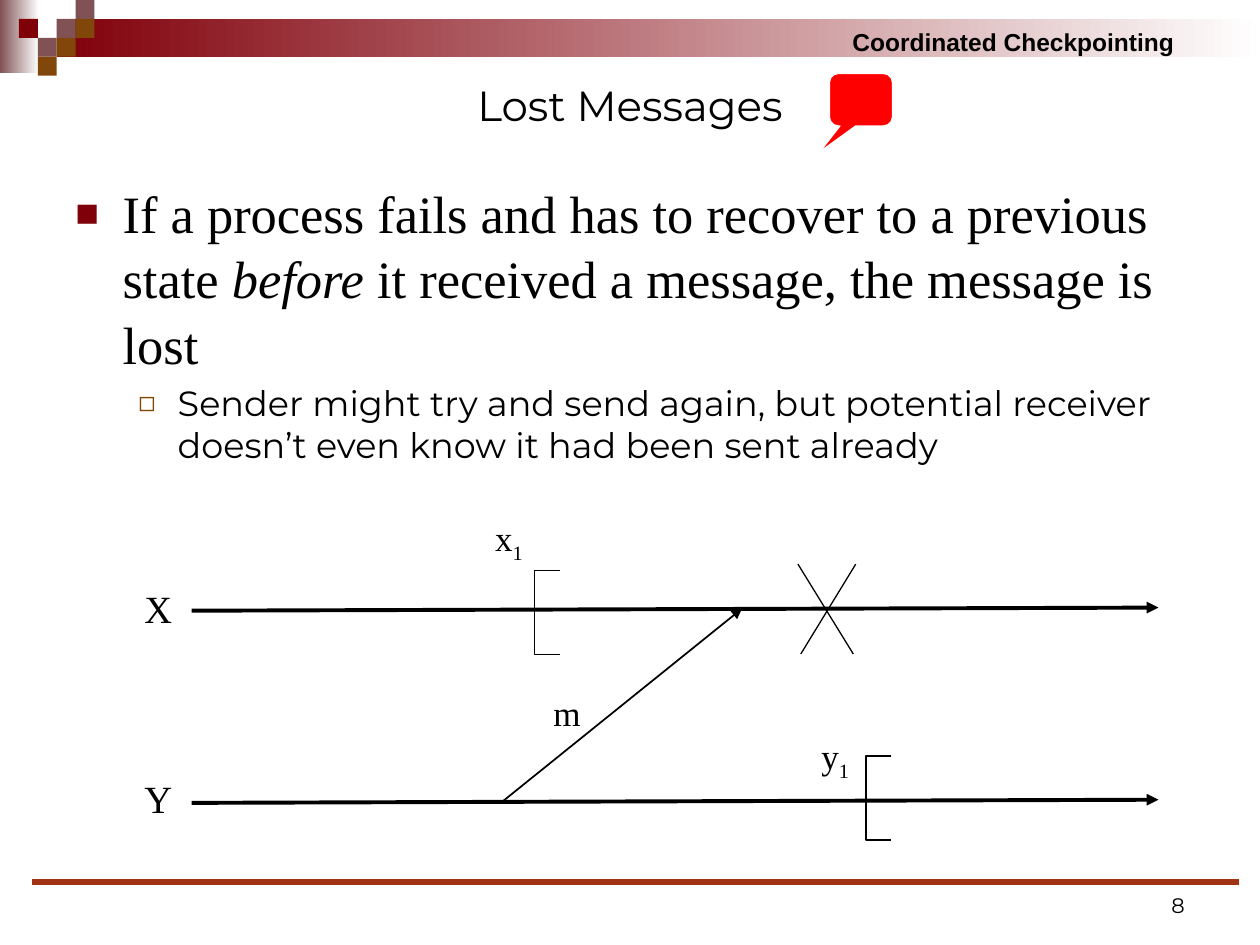
from dataclasses import dataclass

from lxml.etree import SubElement
from pptx import Presentation
from pptx.dml.color import RGBColor
from pptx.enum.shapes import MSO_CONNECTOR, MSO_SHAPE
from pptx.enum.text import MSO_ANCHOR as ANCHOR, PP_ALIGN as ALIGN
from pptx.oxml.ns import qn
from pptx.util import Pt


@dataclass(frozen=True)
class Theme:
    maroon: str = "80000A"
    mauve: str = "805255"
    brown: str = "81460A"
    rule: str = "A13214"
    red: str = "FF0000"
    white: str = "FFFFFF"
    black: str = "000000"
    sans: str = "Montserrat"
    serif: str = "Times New Roman"
    header: str = "Arial"
    body_size: int = 30
    title_size: int = 24
    axis_size: int = 22
    text_size: int = 20
    header_size: int = 14
    number_size: int = 12


T = Theme()
CELL = 10.8


def rgb(value):
    return RGBColor.from_string(value)


def add_block(slide, box, fill, fade_to=None, shape=MSO_SHAPE.RECTANGLE):
    """Preset shape without outline, solid or fading to the right."""
    sp = slide.shapes.add_shape(shape, *map(Pt, box))
    sp.shadow.inherit = False
    sp.line.fill.background()
    if fade_to:
        sp.fill.gradient()
        sp.fill.gradient_angle = 0
        for stop, color in zip(sp.fill.gradient_stops, (fill, fade_to)):
            stop.color.rgb = rgb(color)
    else:
        sp.fill.solid()
        sp.fill.fore_color.rgb = rgb(fill)
    return sp


def add_line(slide, start, end, width, color=T.black, arrow=False):
    line = slide.shapes.add_connector(MSO_CONNECTOR.STRAIGHT, *map(Pt, start + end))
    line.line.color.rgb = rgb(color)
    line.line.width = Pt(width)
    if arrow:
        SubElement(line.line._get_or_add_ln(), qn("a:tailEnd"), type="triangle")
    SubElement(line._element.spPr, qn("a:effectLst"))


def add_bracket(slide, x, y, width=14.6, height=48):
    """Checkpoint mark, open to the right."""
    builder = slide.shapes.build_freeform(Pt(x + width), Pt(y))
    corners = [(x, y), (x, y + height), (x + width, y + height)]
    builder.add_line_segments([(Pt(a), Pt(b)) for a, b in corners], close=False)
    sp = builder.convert_to_shape()
    sp.shadow.inherit = False
    sp.fill.background()
    sp.line.color.rgb = rgb(T.black)
    sp.line.width = Pt(0.75)


def format_run(r, font, size, bold=False, italic=False):
    r.font.name = font
    r.font.size = Pt(size)
    r.font.bold = bold
    r.font.italic = italic
    r.font.color.rgb = rgb(T.black)


def add_text(slide, box, text, font, size, align=ALIGN.LEFT,
             anchor=ANCHOR.TOP, bold=False):
    tf = slide.shapes.add_textbox(*map(Pt, box)).text_frame
    tf.word_wrap = True
    tf.vertical_anchor = anchor
    p = tf.paragraphs[0]
    p.text = text
    p.alignment = align
    format_run(p.runs[0], font, size, bold)
    return tf


def add_label(slide, box, text, size, subscript=None):
    """Centred diagram label without margins."""
    tf = add_text(slide, box, text, T.serif, size, ALIGN.CENTER, ANCHOR.MIDDLE)
    tf.margin_left = tf.margin_right = tf.margin_top = tf.margin_bottom = 0
    if subscript:
        r = tf.paragraphs[0].add_run()
        r.text = subscript
        format_run(r, T.serif, size)
        r.font._element.set("baseline", "-25000")


def set_bullet(p, char, color, percent, left, hanging):
    pPr = p._p.get_or_add_pPr()
    pPr.set("marL", str(Pt(left)))
    pPr.set("indent", str(-Pt(hanging)))
    SubElement(SubElement(pPr, qn("a:buClr")), qn("a:srgbClr"), val=color)
    SubElement(pPr, qn("a:buSzPct"), val=str(percent * 1000))
    SubElement(pPr, qn("a:buFont"), typeface=T.header)
    SubElement(pPr, qn("a:buChar"), char=char)


def add_banner(slide):
    add_block(slide, (0, 0, 22.3, 42), T.mauve, T.white)
    add_block(slide, (32.4, CELL, 687.6, 21.6), T.maroon, T.white)
    # Mosaic squares as column, row, colour
    for col, row, color in [(3, 1, T.mauve), (4, 0, T.mauve), (4, 1, T.brown),
                            (2, 2, T.mauve), (1, 1, T.maroon), (3, 2, T.brown),
                            (2, 3, T.brown)]:
        add_block(slide, (col * CELL, row * CELL, CELL, CELL), color)
    add_text(slide, (480, 12, 204, 24), "Coordinated Checkpointing",
             T.header, T.header_size, bold=True)


def add_body(slide):
    tf = add_text(slide, (36, 96, 648, 366),
                  "If a process fails and has to recover to a previous state ",
                  T.serif, T.body_size)
    tf.margin_top = Pt(6)
    p = tf.paragraphs[0]
    p.line_spacing = 1.04
    set_bullet(p, "■", T.maroon, 75, 27, 27)
    for text, italic in [("before", True),
                         (" it received a message, the message is lost", False)]:
        r = p.add_run()
        r.text = text
        format_run(r, T.serif, T.body_size, italic=italic)

    p = tf.add_paragraph()
    p.text = ("Sender might try and send again, but potential receiver "
              "doesn’t even know it had been sent already")
    p.level = 1
    set_bullet(p, "◻", T.brown, 80, 58.5, 22.5)
    p.space_before = Pt(4)
    format_run(p.runs[0], T.sans, T.text_size)


def add_diagram(slide):
    # Process time lines
    for name, y, top in [("X", 349, 324.7), ("Y", 458.8, 433.5)]:
        add_line(slide, (109.5, y), (662, y - 1.8), 2.25, arrow=True)
        add_label(slide, (77.8, top, 25.2, 45.4), name, T.axis_size)
    # Message
    add_line(slide, (287.3, 457.9), (424, 347.8), 1, arrow=True)
    # Message and checkpoint names
    for text, subscript, x, y in [("m", None, 304.6, 386),
                                  ("y", "1", 457.9, 412.6),
                                  ("x", "1", 271.4, 288)]:
        add_label(slide, (x, y, 38.9, 41.8), text, T.text_size, subscript)
    # Checkpoints
    add_bracket(slide, 305.4, 326)
    add_bracket(slide, 494.8, 432)
    # Failure cross
    for x_top, x_bottom in [(489, 457.6), (456, 487.6)]:
        add_line(slide, (x_top, 322.4), (x_bottom, 373.7), 0.75)


def main():
    prs = Presentation()
    prs.slide_width, prs.slide_height = Pt(720), Pt(540)
    slide = prs.slides.add_slide(prs.slide_layouts[6])

    add_banner(slide)
    add_line(slide, (18, 504), (708, 504), 3, T.rule)
    add_text(slide, (36, 36, 648, 48), "Lost Messages", T.sans, T.title_size,
             ALIGN.CENTER, ANCHOR.MIDDLE)
    add_body(slide)
    add_text(slide, (516, 492, 168, 36), "8", T.sans, T.number_size,
             ALIGN.RIGHT, ANCHOR.BOTTOM)
    add_diagram(slide)

    # Speech bubble beside the title
    bubble = add_block(slide, (474, 42, 36, 30), T.red,
                       shape=MSO_SHAPE.ROUNDED_RECTANGULAR_CALLOUT)
    bubble.line.color.rgb = rgb(T.white)
    bubble.line.width = Pt(0.75)
    for i, value in enumerate((-0.66, 1, 0.17)):
        bubble.adjustments[i] = value

    prs.save("out.pptx")


if __name__ == "__main__":
    main()
